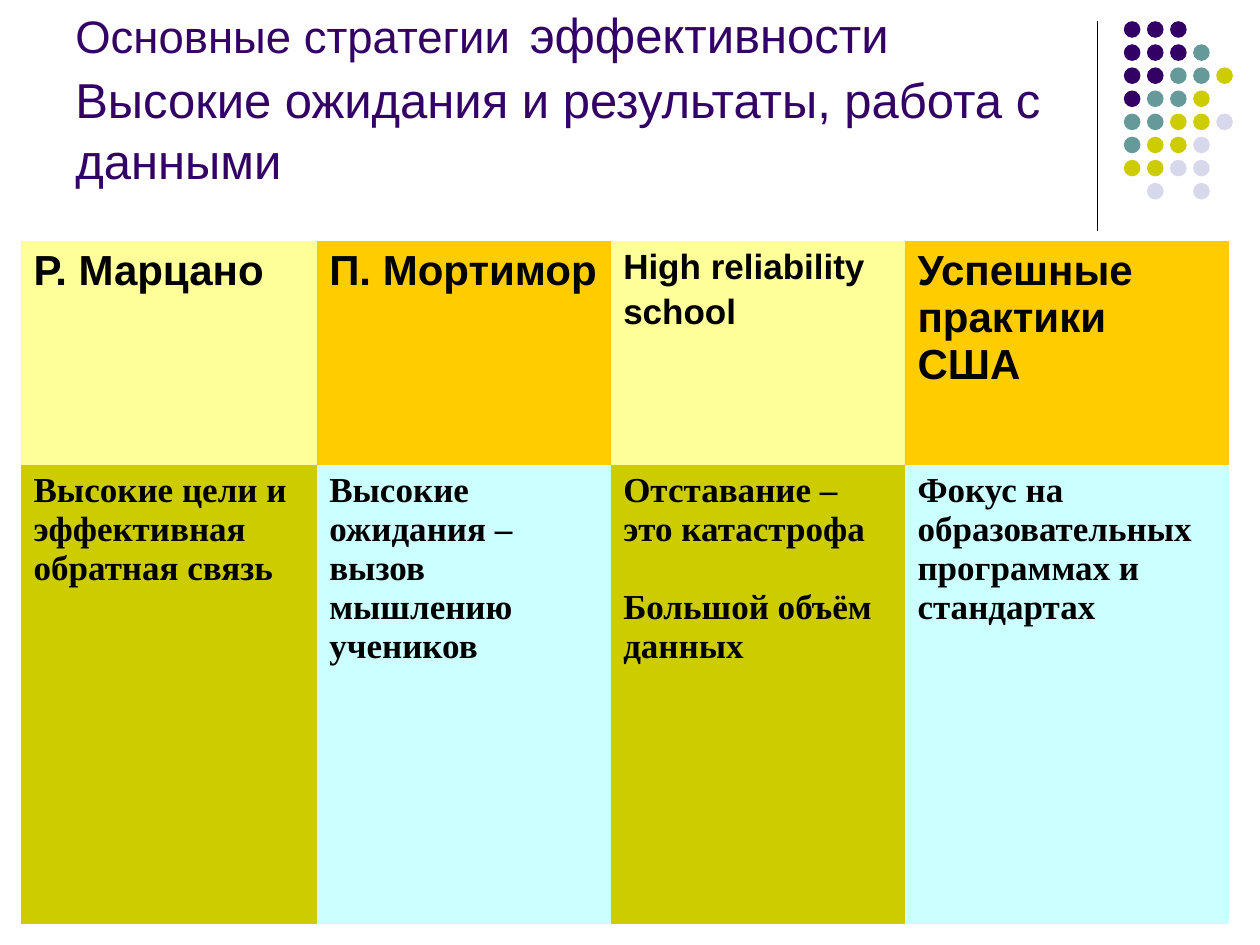
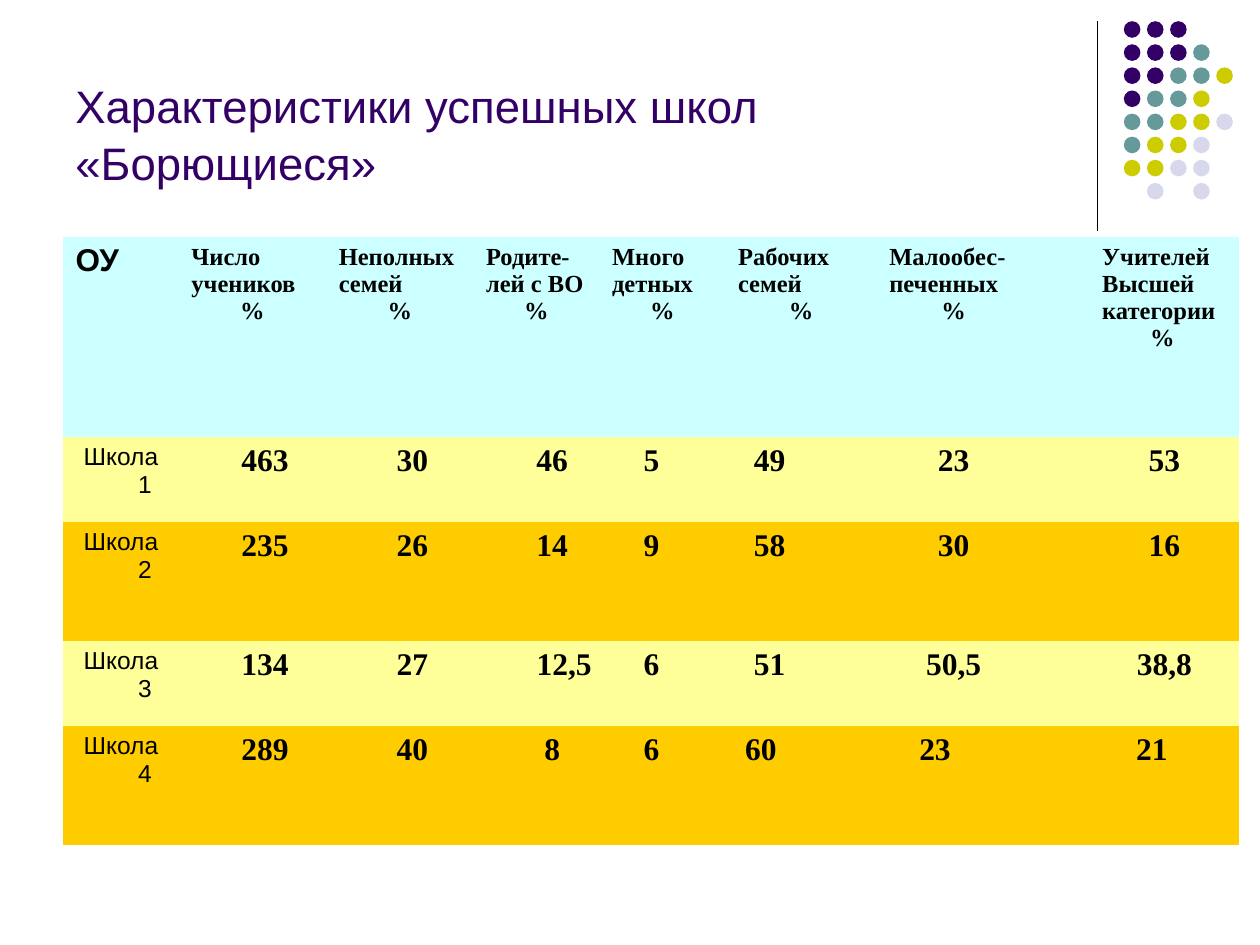
from dataclasses import dataclass

from pptx import Presentation
from pptx.dml.color import RGBColor
from pptx.enum.shapes import MSO_CONNECTOR, MSO_SHAPE
from pptx.enum.text import MSO_ANCHOR, PP_ALIGN
from pptx.oxml.ns import qn
from pptx.util import Pt


@dataclass(frozen=True)
class Theme:
    purple: str = "330066"
    teal: str = "669999"
    olive: str = "CCCC00"
    lilac: str = "D8D8EC"
    yellow: str = "FFFF99"
    amber: str = "FFCC00"
    aqua: str = "CCFFFF"
    black: str = "000000"
    sans: str = "Arial"
    serif: str = "Times New Roman"
    title: int = 26
    title_large: int = 28
    title_gap: int = 39
    heading: int = 24
    text: int = 20
    value: int = 18
    label: int = 14


T = Theme()
HANG = 27.4  # hanging indent in table cells
NO_GRID_STYLE = "{2D5ABB26-0587-4C30-8999-92F81FD0307C}"

# One letter per dot: purple, teal, olive, lilac; a dot means a gap
DOT_ROWS = ["PPP..", "PPPT.", "PPTTO", "PTTO.", "TTOOL", "TOOL.", "OOLL.", ".L.L."]
DOT_COLORS = {"P": T.purple, "T": T.teal, "O": T.olive, "L": T.lilac}
DOT_LEFT, DOT_TOP, DOT_STEP, DOT_SIZE = 642.2, 12.1, 13.2, 9.5


# Text
def add_run(p, text, size, font=T.sans, color=T.black, bold=False):
    r = p.add_run()
    r.text = text
    r.font.size, r.font.name, r.font.bold = Pt(size), font, bold
    r.font.color.rgb = RGBColor.from_string(color)


def indent(p, lead=0):
    """Hanging paragraph whose first line starts at lead."""
    pPr = p._p.get_or_add_pPr()
    pPr.set("marL", str(Pt(HANG)))
    pPr.set("indent", str(Pt(lead - HANG)))


def add_title(s, lines):
    """Each line is a list of (text, size) runs."""
    tf = s.shapes.add_textbox(Pt(36), Pt(9.4), Pt(594), Pt(102.2)).text_frame
    tf.word_wrap = True
    tf.vertical_anchor = MSO_ANCHOR.BOTTOM
    p = tf.paragraphs[0]
    p.line_spacing = 1.04
    for i, line in enumerate(lines):
        if i:
            p.add_line_break()
        for text, size in line:
            add_run(p, text, size, color=T.purple)


# Shared corner decoration
def add_corner(s):
    line = s.shapes.add_connector(MSO_CONNECTOR.STRAIGHT, Pt(627), Pt(12), Pt(627), Pt(132))
    line.line.color.rgb = RGBColor.from_string(T.black)
    line.line.width = Pt(0.75)
    spPr = line._element.spPr
    spPr.append(spPr.makeelement(qn("a:effectLst"), {}))
    dots = s.shapes.add_group_shape()
    for row, codes in enumerate(DOT_ROWS):
        for col, code in enumerate(codes):
            if code not in DOT_COLORS:
                continue
            dot = dots.shapes.add_shape(
                MSO_SHAPE.OVAL, Pt(DOT_LEFT + col * DOT_STEP),
                Pt(DOT_TOP + row * DOT_STEP), Pt(DOT_SIZE), Pt(DOT_SIZE))
            dot.shadow.inherit = False
            dot.fill.solid()
            dot.fill.fore_color.rgb = RGBColor.from_string(DOT_COLORS[code])
            dot.line.fill.background()


# Tables
def add_grid(s, left, top, widths, heights):
    frame = s.shapes.add_table(len(heights), len(widths), Pt(left), Pt(top),
                               Pt(sum(widths)), Pt(sum(heights)))
    table = frame.table
    table.first_row = table.horz_banding = False
    table._tbl.tblPr.find(qn("a:tableStyleId")).text = NO_GRID_STYLE
    for column, width in zip(table.columns, widths):
        column.width = Pt(width)
    for row, height in zip(table.rows, heights):
        row.height = Pt(height)
    return table


def fill_cell(cell, color):
    cell.fill.solid()
    cell.fill.fore_color.rgb = RGBColor.from_string(color)


def cell_paragraphs(cell, count):
    tf = cell.text_frame
    return [tf.paragraphs[0]] + [tf.add_paragraph() for _ in range(count - 1)]


def merged_cells(table, row, spans, color):
    """Merge a row by its spans and return the leading cells."""
    col, cells = 0, []
    for span in spans:
        cell = table.cell(row, col)
        if span > 1:
            cell.merge(table.cell(row, col + span - 1))
        fill_cell(cell, color)
        cells.append(cell)
        col += span
    return cells


# Slide 1
def add_strategies_table(s):
    table = add_grid(s, 12, 138, [169, 168, 168.2, 185], [127.8, 262.2])
    headings = [
        [("Р. Марцано", T.heading)],
        [("П. Мортимор", T.heading)],
        [("High reliability school", T.text), (" ", T.heading)],
        [("Успешные практики США", T.heading)],
    ]
    strategies = [
        ["Высокие цели и", "эффективная обратная связь"],
        ["Высокие ожидания –вызов мышлению учеников"],
        ["Отставание – это катастрофа", "Большой объём данных"],
        ["Фокус на образовательных программах и стандартах"],
    ]
    for col, (runs, texts) in enumerate(zip(headings, strategies)):
        head, body = table.cell(0, col), table.cell(1, col)
        fill_cell(head, T.amber if col % 2 else T.yellow)
        fill_cell(body, T.aqua if col % 2 else T.olive)
        p = head.text_frame.paragraphs[0]
        if col < 2:
            indent(p)
        for text, size in runs:
            add_run(p, text, size, bold=True)
        for p, text in zip(cell_paragraphs(body, len(texts)), texts):
            add_run(p, text, T.text, T.serif, bold=True)
    table.cell(1, 2).text_frame.paragraphs[1].space_before = Pt(22.5)


# Slide 2
def add_schools_header(table):
    headings = [
        ["ОУ"], ["Число", "учеников", "%"], ["Неполных", "семей", "%"],
        ["Родите-лей с ВО", "%"], ["Много", "детных", "%"], ["Рабочих", "семей", "%"],
        ["Малообес-печенных", "%"], [], ["Учителей", "Высшей", "категории %"],
    ]
    cells = merged_cells(table, 0, [1, 1, 2, 1, 3, 2, 2, 2, 1], T.aqua)
    for cell, texts in zip(cells, headings):
        for p, text in zip(cell_paragraphs(cell, len(texts)), texts):
            if len(texts) != 2:
                indent(p)
            if text == "%":
                p.alignment = PP_ALIGN.CENTER
            if text == "ОУ":
                add_run(p, text, T.value, bold=True)
            else:
                add_run(p, text, T.label, T.serif, bold=True)


def add_school_row(table, row, values, spans, leads):
    """leads maps a value's place to the start of its line."""
    cells = merged_cells(table, row, spans, T.yellow if row % 2 else T.amber)
    for i, (cell, text) in enumerate(zip(cells, [f"Школа {row}"] + values)):
        if not text:
            continue
        p = cell.text_frame.paragraphs[0]
        p.alignment = PP_ALIGN.CENTER
        indent(p, leads.get(i, 0))
        if i == 0:
            add_run(p, text, T.label)
        else:
            add_run(p, text, T.value, T.serif, bold=True)


def add_schools_table(s):
    widths = [66.2, 84.2, 14.4, 69.8, 72, 18, 18, 36, 54, 32.4, 49.7, 38.2, 19.4, 14.4, 85.5]
    table = add_grid(s, 36, 135.4, widths, [114.4, 48.7, 67.9, 48.7, 67.9])
    add_schools_header(table)
    usual = [1, 2, 1, 2, 1, 3, 2, 2, 1]
    last = [1, 2, 1, 2, 1, 2, 2, 2, 2]
    schools = [
        (["463", "30", "46", "5", "49", "23", "", "53"], usual, {}),
        (["235", "26", "14", "9", "58", "30", "", "16"], usual, {}),
        (["134", "27", "12,5", "6", "51", "50,5", "", "38,8"], usual, {3: 13.5}),
        (["289", "40", "8", "6", "60", "23", "", "21"], last, {5: 22.5, 6: 49.3}),
    ]
    for row, (values, spans, leads) in enumerate(schools, 1):
        add_school_row(table, row, values, spans, leads)


def main():
    prs = Presentation()
    prs.slide_width, prs.slide_height = Pt(720), Pt(540)
    slides = [
        ([[("Основные стратегии", T.title), (" ", T.title_gap),
           ("эффективности", T.title_large)],
          [("Высокие ожидания и результаты, работа с данными", T.title_large)]],
         add_strategies_table),
        ([[("Характеристики успешных школ", T.title)], [("«Борющиеся»", T.title)]],
         add_schools_table),
    ]
    for title, add_content in slides:
        s = prs.slides.add_slide(prs.slide_layouts[6])
        add_corner(s)
        add_title(s, title)
        add_content(s)
    prs.save("out.pptx")


if __name__ == "__main__":
    main()
